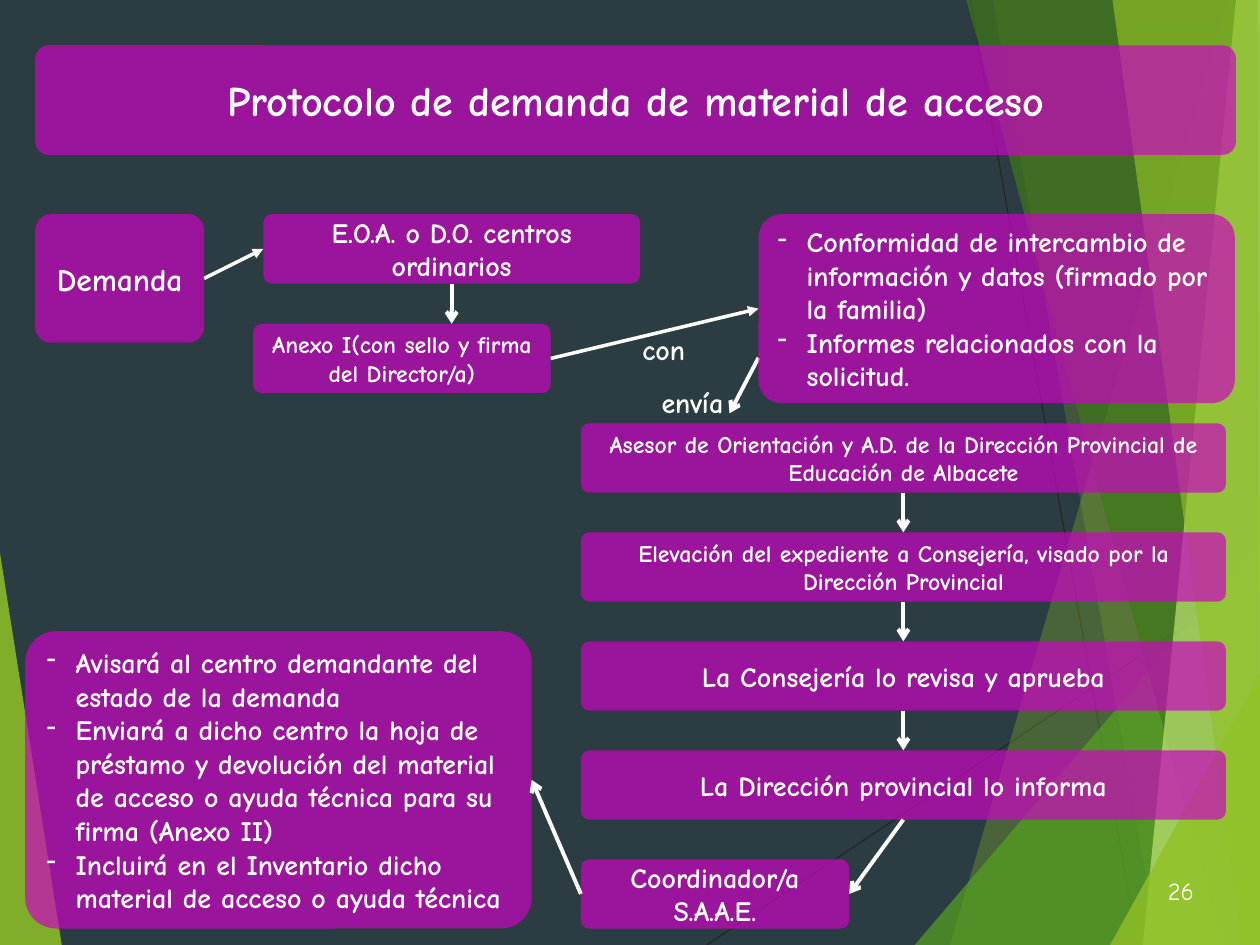
"""Slide with the protocol for requesting access material."""
from dataclasses import dataclass

from lxml import etree
from pptx import Presentation
from pptx.dml.color import RGBColor
from pptx.enum import shapes, text
from pptx.oxml import ns
from pptx.util import Inches, Pt


@dataclass(frozen=True)
class Theme:
    """Colours, type sizes and line widths of the slide."""
    font: str = "Comic Neue"
    ground: str = "2C3C43"
    ink: str = "FFFFFF"
    panel: str = "CB05C2"
    hairline: str = "262626"
    lime: str = "90C226"
    green: str = "54A021"
    forest: str = "3F7819"
    pale: str = "C0E474"
    title: float = 24
    lead: float = 18
    body: float = 16
    number: float = 14
    small: float = 13.6


@dataclass(frozen=True)
class Box:
    """A rectangle in inches."""
    left: float
    top: float
    width: float
    height: float

    def at(self, x, y):
        """Return the point at the given fractions of the box."""
        return self.left + x * self.width, self.top + y * self.height

    def offset(self, dx, dy):
        """Return the point at a distance from the top left corner."""
        return self.left + dx, self.top + dy

    def inner(self, dx, dy, width, height):
        """Return a box offset from the top left corner of this one."""
        return Box(*self.offset(dx, dy), width, height)

    def emu(self):
        """Return the four measures as lengths."""
        return [Inches(v) for v in (self.left, self.top, self.width, self.height)]


THEME = Theme()


def paint(fill, colour, opacity=100):
    """Fill with a solid colour at an opacity in percent."""
    fill.solid()
    fill.fore_color.rgb = RGBColor.from_string(colour)
    if opacity < 100:
        solid = fill._xPr.find(ns.qn("a:solidFill"))
        etree.SubElement(solid[0], ns.qn("a:alpha"), val=str(opacity * 1000))


def draw_line(slide, start, end, colour=THEME.ink, width=2.25, head=None):
    """Draw a straight line, with an arrowhead at its end if one is named."""
    ends = [Inches(v) for v in (*start, *end)]
    line = slide.shapes.add_connector(shapes.MSO_CONNECTOR.STRAIGHT, *ends)
    line.line.color.rgb = RGBColor.from_string(colour)
    line.line.width = Pt(width)
    if head:
        etree.SubElement(line.line._get_or_add_ln(), ns.qn("a:tailEnd"), type=head)
    etree.SubElement(line._element.spPr, ns.qn("a:effectLst"))


def write(frame, lines, size, align=text.PP_ALIGN.CENTER, bold=True, dashed=False):
    """Write one paragraph per line, with hanging dashes if asked."""
    for index, line in enumerate(lines):
        paragraph = frame.paragraphs[0] if index == 0 else frame.add_paragraph()
        paragraph.text = line
        paragraph.alignment = align
        paragraph.font.name = THEME.font
        paragraph.font.size = Pt(size)
        paragraph.font.bold = bold
        paragraph.font.color.rgb = RGBColor.from_string(THEME.ink)
        if dashed:
            props = paragraph._p.get_or_add_pPr()
            props.set("marL", str(Inches(0.23)))
            props.set("indent", str(-Inches(0.23)))
            bullet = etree.Element(ns.qn("a:buChar"), char="-")
            props.insert_element_before(bullet, "a:tabLst", "a:defRPr", "a:extLst")


def add_panel(slide, box, lines, size=THEME.body, dashed=False, corner=0.123):
    """Place a rounded translucent panel with its wording."""
    panel = slide.shapes.add_shape(shapes.MSO_SHAPE.ROUNDED_RECTANGLE, *box.emu())
    panel.adjustments[0] = corner
    panel.shadow.inherit = False
    paint(panel.fill, THEME.panel, 70)
    panel.line.fill.background()
    panel.text_frame.word_wrap = True
    panel.text_frame.vertical_anchor = text.MSO_ANCHOR.MIDDLE
    align = text.PP_ALIGN.LEFT if dashed else text.PP_ALIGN.CENTER
    write(panel.text_frame, lines, size, align, dashed=dashed)


def add_label(slide, box, wording, size=THEME.body, align=text.PP_ALIGN.LEFT, bold=True, wrap=True):
    """Place a free label."""
    frame = slide.shapes.add_textbox(*box.emu()).text_frame
    frame.word_wrap = wrap
    write(frame, [wording], size, align, bold)


def build_backdrop(slide, box):
    """Draw the ground, the two hairlines and the green facets."""
    paint(slide.background.fill, THEME.ground)
    right, bottom = box.width, box.height
    for start, end in [((5.61, bottom), (right, 4.57)), ((7.7, 0), (9.03, bottom))]:
        draw_line(slide, box.offset(*start), box.offset(*end), THEME.hairline, 0.75)
    corners = [(right, bottom), (right, 0)]
    facets = [
        (THEME.lime, 85, [(0, 4.39), (0.49, bottom), (0, bottom)]),
        (THEME.lime, 30, [(9.75, 0), (7.54, bottom), *corners]),
        (THEME.lime, 20, [(7.88, 0), (9.19, bottom), *corners]),
        (THEME.green, 72, [(7.26, bottom), (right, 4.29), (right, bottom)]),
        (THEME.forest, 70, [(7.67, 0), (9.7, bottom), *corners]),
        (THEME.pale, 70, [(9.81, 0), (9.07, bottom), *corners]),
        (THEME.lime, 65, [(8.83, 0), (9.86, bottom), (right, bottom), (9.98, 0)]),
        (THEME.lime, 80, [(8.81, bottom), (right, 5.35), (right, bottom)]),
    ]
    for colour, opacity, outline in facets:
        points = [tuple(Inches(v) for v in box.offset(x, y)) for x, y in outline]
        builder = slide.shapes.build_freeform(*points[0])
        builder.add_line_segments(points[1:], close=True)
        facet = builder.convert_to_shape()
        facet.shadow.inherit = False
        paint(facet.fill, colour, opacity)
        facet.line.fill.background()


def build_request(slide, box):
    """Place the request, its annex and the papers that go with it."""
    demand = box.inner(0, 0, 1.34, 1.02)
    centre = box.inner(1.81, 0, 2.99, 0.55)
    annex = box.inner(1.73, 0.87, 2.36, 0.55)
    papers = box.inner(5.74, 0, 3.78, box.height)
    draw_line(slide, annex.at(1, 0.5), papers.at(0, 0.5), width=2, head="triangle")
    draw_line(slide, demand.at(1, 0.5), centre.at(0, 0.5), width=2, head="triangle")
    draw_line(slide, centre.at(0.5, 1), (centre.at(0.5, 1)[0], annex.top), head="arrow")
    draw_line(slide, papers.at(0, 0.76), box.offset(5.51, 1.58), head="arrow")
    add_label(slide, box.inner(4.72, 1.31, 0.99, 0.37), "envía", align=text.PP_ALIGN.CENTER)
    add_label(slide, box.inner(4.72, 0.89, 0.55, 0.37), "con")
    add_panel(slide, demand, ["Demanda"], THEME.lead)
    add_panel(slide, centre, ["E.O.A. o D.O. centros ordinarios"])
    add_panel(slide, annex, ["Anexo I(con sello y firma del Director/a)"], THEME.small)
    add_panel(slide, papers, [
        "Conformidad de intercambio de información y datos (firmado por la familia)",
        "Informes relacionados con la solicitud.",
    ], dashed=True)


def build_approval(slide, box):
    """Stack the approval steps and return the box of the last one."""
    steps = [
        ("Asesor de Orientación y A.D. de la Dirección Provincial de Educación de Albacete", THEME.small, box.width),
        ("Elevación del expediente a Consejería, visado por la Dirección Provincial", THEME.small, box.width),
        ("La Consejería lo revisa y aprueba", THEME.body, box.width),
        ("La Dirección provincial lo informa", THEME.body, box.width),
        ("Coordinador/a S.A.A.E.", THEME.body, 2.13),
    ]
    height = 0.55
    pitch = (box.height - height) / (len(steps) - 1)
    places = [box.inner(0, i * pitch, width, height) for i, (_, _, width) in enumerate(steps)]
    for place, (wording, size, _) in zip(places, steps):
        add_panel(slide, place, [wording], size)
    for upper, lower in zip(places, places[1:]):
        target = lower.at(0.5, 0) if lower.width == upper.width else lower.at(1, 0.5)
        draw_line(slide, upper.at(0.5, 1), target, head="arrow")
    return places[-1]


def build_duties(slide, box, coordinator):
    """Place the coordinator's duties and the arrow that leads to them."""
    add_panel(slide, box, [
        "Avisará al centro demandante del estado de la demanda",
        "Enviará a dicho centro la hoja de préstamo y devolución del material de acceso "
        "o ayuda técnica para su firma (Anexo II)",
        "Incluirá en el Inventario dicho material de acceso o ayuda técnica",
    ], dashed=True, corner=0.104)
    draw_line(slide, coordinator.at(0, 0.5), box.at(1, 0.5), head="arrow")


def main():
    """Build and save the slide."""
    deck = Presentation()
    deck.slide_width, deck.slide_height = Inches(10), Inches(7.5)
    slide = deck.slides.add_slide(deck.slide_layouts[6])
    build_backdrop(slide, Box(0, 0, 10, 7.5))
    add_panel(slide, Box(0.28, 0.36, 9.53, 0.87), ["Protocolo de demanda de material de acceso"], THEME.title)
    build_request(slide, Box(0.28, 1.7, 9.52, 1.5))
    coordinator = build_approval(slide, Box(4.61, 3.36, 5.12, 4.01))
    build_duties(slide, Box(0.2, 5.01, 4.02, 2.36), coordinator)
    add_label(slide, Box(9.17, 6.9, 0.42, 0.34), "26", THEME.number, bold=False, wrap=False)
    deck.save("out.pptx")


if __name__ == "__main__":
    main()
